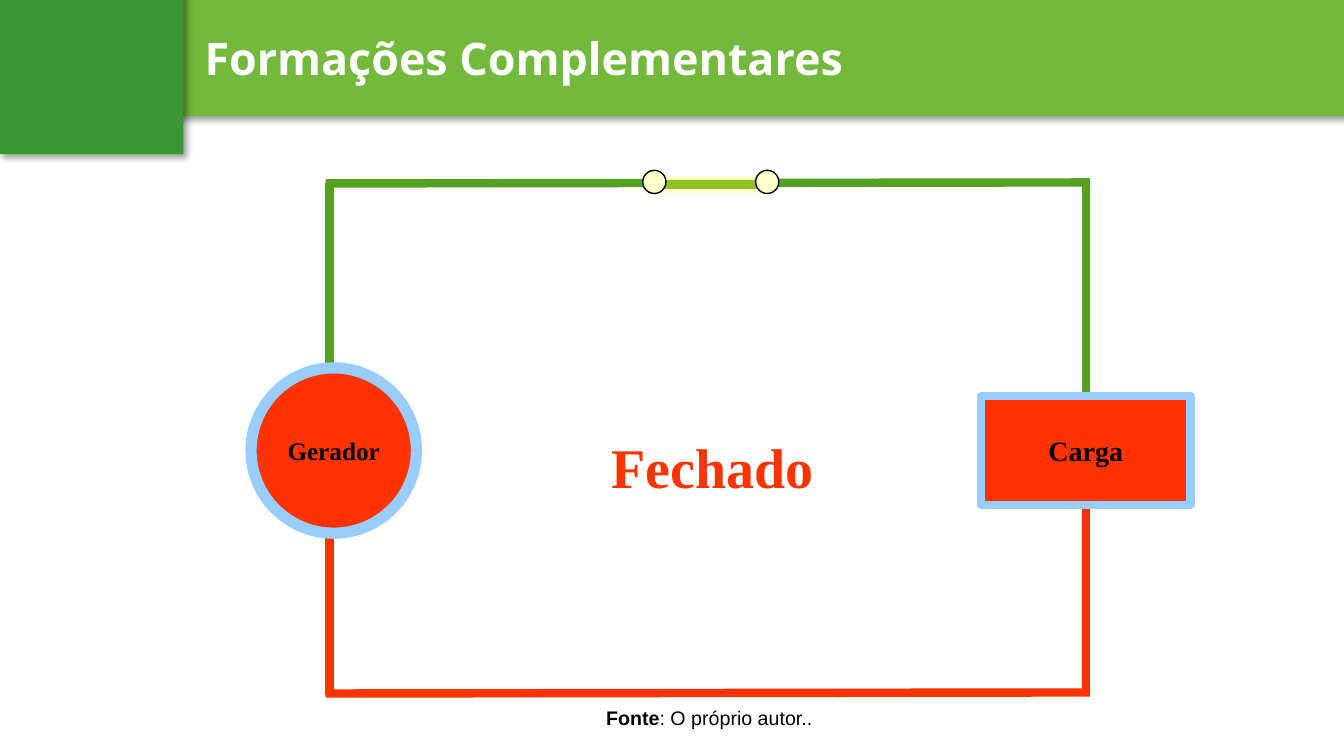
from lxml import etree
from pptx import Presentation
from pptx.dml.color import RGBColor
from pptx.enum.shapes import MSO_CONNECTOR as Connector, MSO_SHAPE as Shape
from pptx.enum.text import MSO_ANCHOR as Anchor, PP_ALIGN as Align
from pptx.oxml import parse_xml
from pptx.oxml.ns import nsdecls, qn
from pptx.util import Inches, Pt

WHITE = RGBColor(0xFF, 0xFF, 0xFF)
BLACK = RGBColor(0x00, 0x00, 0x00)
BAND_GREEN = RGBColor(0x72, 0xB9, 0x3C)
CORNER_GREEN = RGBColor(0x39, 0x97, 0x36)
WIRE_GREEN = RGBColor(0x54, 0xA0, 0x21)
SWITCH_GREEN = RGBColor(0x90, 0xC2, 0x26)
RED = RGBColor(0xFF, 0x33, 0x00)
LIGHT_BLUE = RGBColor(0x99, 0xCC, 0xFF)
CREAM = RGBColor(0xFF, 0xFF, 0xCC)


def shadow_effect(alpha, blur=5, distance=3):
    return parse_xml(
        f'<a:effectLst {nsdecls("a")}><a:outerShdw blurRad="{Pt(blur)}" '
        f'dist="{Pt(distance)}" dir="2700000" algn="tl" rotWithShape="0">'
        f'<a:srgbClr val="000000"><a:alpha val="{alpha * 1000}"/></a:srgbClr>'
        '</a:outerShdw></a:effectLst>')


def add_block(page, kind, left, top, width, height, fill, line=None, weight=0):
    block = page.shapes.add_shape(kind, Inches(left), Inches(top),
                                  Inches(width), Inches(height))
    block.shadow.inherit = False
    block.fill.solid()
    block.fill.fore_color.rgb = fill
    if line is None:
        block.line.fill.background()
    else:
        block.line.color.rgb = line
        block.line.width = Pt(weight)
    return block


def add_wire(page, start, end, color):
    wire = page.shapes.add_connector(
        Connector.STRAIGHT, *(Inches(value) for value in (*start, *end)))
    wire.line.color.rgb = color
    wire.line.width = Pt(6)
    etree.SubElement(wire._element.spPr, qn("a:effectLst"))


def add_textbox(page, left, top, width, height):
    box = page.shapes.add_textbox(Inches(left), Inches(top),
                                  Inches(width), Inches(height))
    box.text_frame.word_wrap = True
    return box.text_frame


def write(frame, text, font, size, color, align=Align.CENTER, bold=True):
    para = frame.paragraphs[0]
    para.alignment = align
    span = para.add_run()
    span.text = text
    para.font.name = font
    para.font.size = Pt(size)
    para.font.bold = bold
    para.font.color.rgb = color
    return para


def add_text_shadow(para, alpha):
    para.runs[0].font._element.append(shadow_effect(alpha))


def add_header(page, left, top, width):
    # Wide band, title and corner square
    corner_width = 1.82
    band_left = left + 1.41
    band = add_block(page, Shape.RECTANGLE, band_left, top,
                     left + width - band_left, 1.15, BAND_GREEN)
    title = add_textbox(page, left + 1.93, top + 0.26, 10.82, 0.64)
    para = write(title, "Formações Complementares", "Open Sans", 32, WHITE, Align.LEFT)
    add_text_shadow(para, 60)
    corner = add_block(page, Shape.RECTANGLE, left, top - 0.08,
                       corner_width, 1.61, CORNER_GREEN)
    for block in (band, corner):
        properties = block._element.spPr
        properties.remove(properties.find(qn("a:effectLst")))
        properties.append(shadow_effect(40))


def add_device(page, kind, center, size, weight, label, label_size):
    width, height = size
    device = add_block(page, kind, center[0] - width / 2, center[1] - height / 2,
                       width, height, RED, LIGHT_BLUE, weight)
    device.text_frame.vertical_anchor = Anchor.MIDDLE
    write(device.text_frame, label, "Times New Roman", label_size, BLACK)


def add_switch(page, left, middle, length):
    # Glow lines on both sides of the closed contact
    right = left + length
    for offset in (-0.04, 0.04):
        add_wire(page, (left + 0.1, middle + offset),
                 (right - 0.09, middle + offset), CREAM)
    add_wire(page, (left, middle), (right, middle), SWITCH_GREEN)
    # Terminals
    diameter = 0.23
    for center in (left + 0.03, right - 0.01):
        add_block(page, Shape.OVAL, center - diameter / 2, middle - 0.14,
                  diameter, diameter, CREAM, BLACK, 1)


def add_circuit(page, left, top, width, height):
    right, bottom = left + width, top + height
    middle = top + 2.65
    overhang = 0.04
    # Wires: green above the devices, red below
    for side in (left, right):
        add_wire(page, (side, middle), (side, top), WIRE_GREEN)
        add_wire(page, (side, bottom + 0.02), (side, middle), RED)
    for level, color in ((top, WIRE_GREEN), (bottom, RED)):
        add_wire(page, (left - overhang, level),
                 (right + overhang, level - 0.01), color)
    # Devices
    add_device(page, Shape.OVAL, (left + 0.04, middle), (1.64, 1.64), 8, "Gerador", 18)
    add_device(page, Shape.RECTANGLE, (right, middle), (2.08, 1.08), 6, "Carga", 20)
    # State of the circuit
    state = add_textbox(page, left + 2.24, top + 2.02, 3.12, 0.52)
    para = write(state, "Fechado", "Times New Roman", 40, RED)
    para.line_spacing = 1.6
    add_text_shadow(para, 20)
    add_switch(page, left + 3.19, top + 0.01, 1.16)


def add_source_note(page, left, top, width, height):
    frame = add_textbox(page, left, top, width, height)
    frame.margin_top = frame.margin_bottom = Inches(0.1)
    para = write(frame, "Fonte", "Arial", 14, BLACK, bold=False)
    para.runs[0].font.bold = True
    para.add_run().text = ": O próprio autor.."


def main():
    deck = Presentation()
    deck.slide_width, deck.slide_height = Inches(13.33), Inches(7.5)
    page = deck.slides.add_slide(deck.slide_layouts[6])
    add_header(page, 0, 0, 13.33)
    add_circuit(page, 3.27, 1.82, 7.5, 5.06)
    add_source_note(page, 5.24, 6.9, 3.59, 0.44)
    deck.save("out.pptx")


if __name__ == "__main__":
    main()
